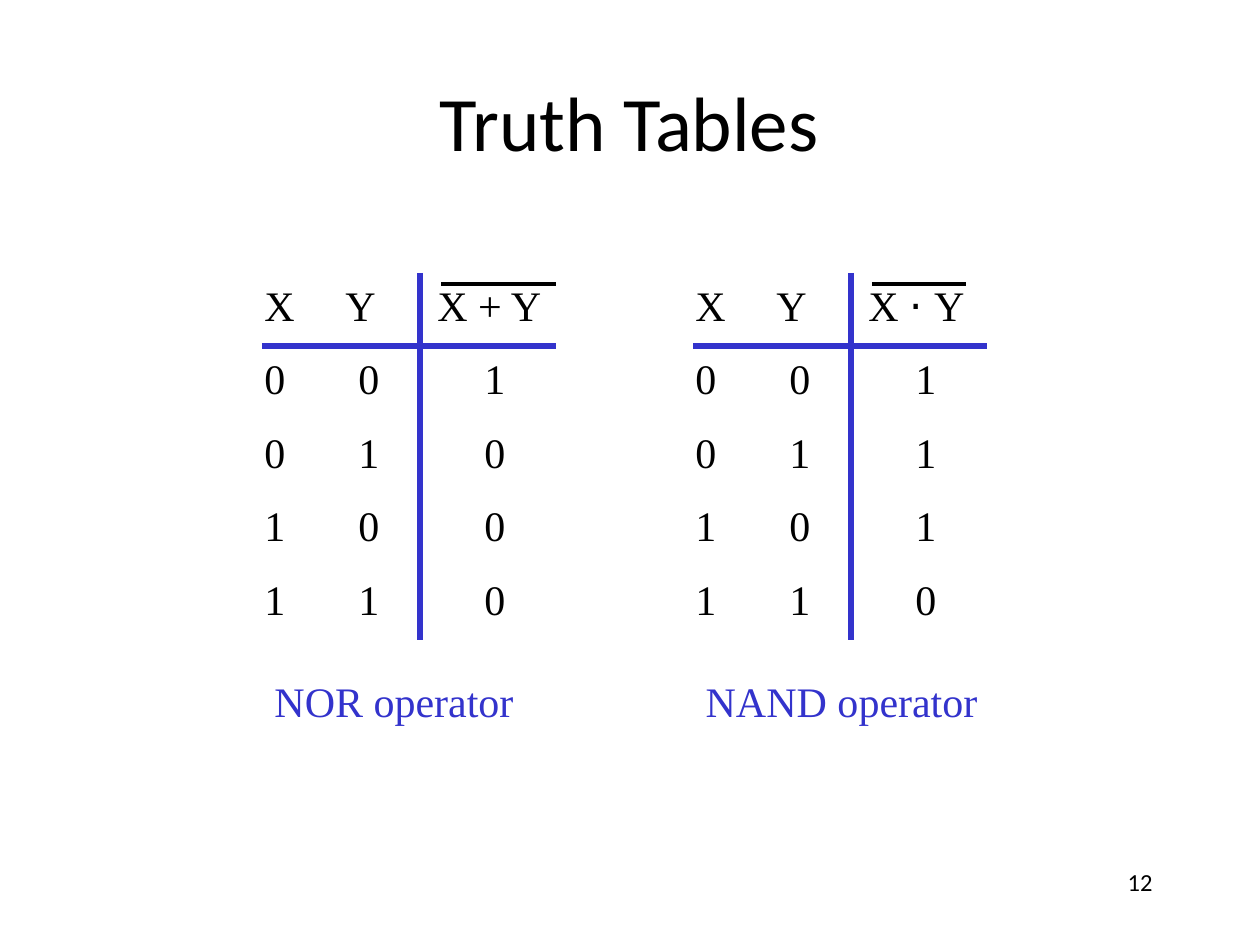
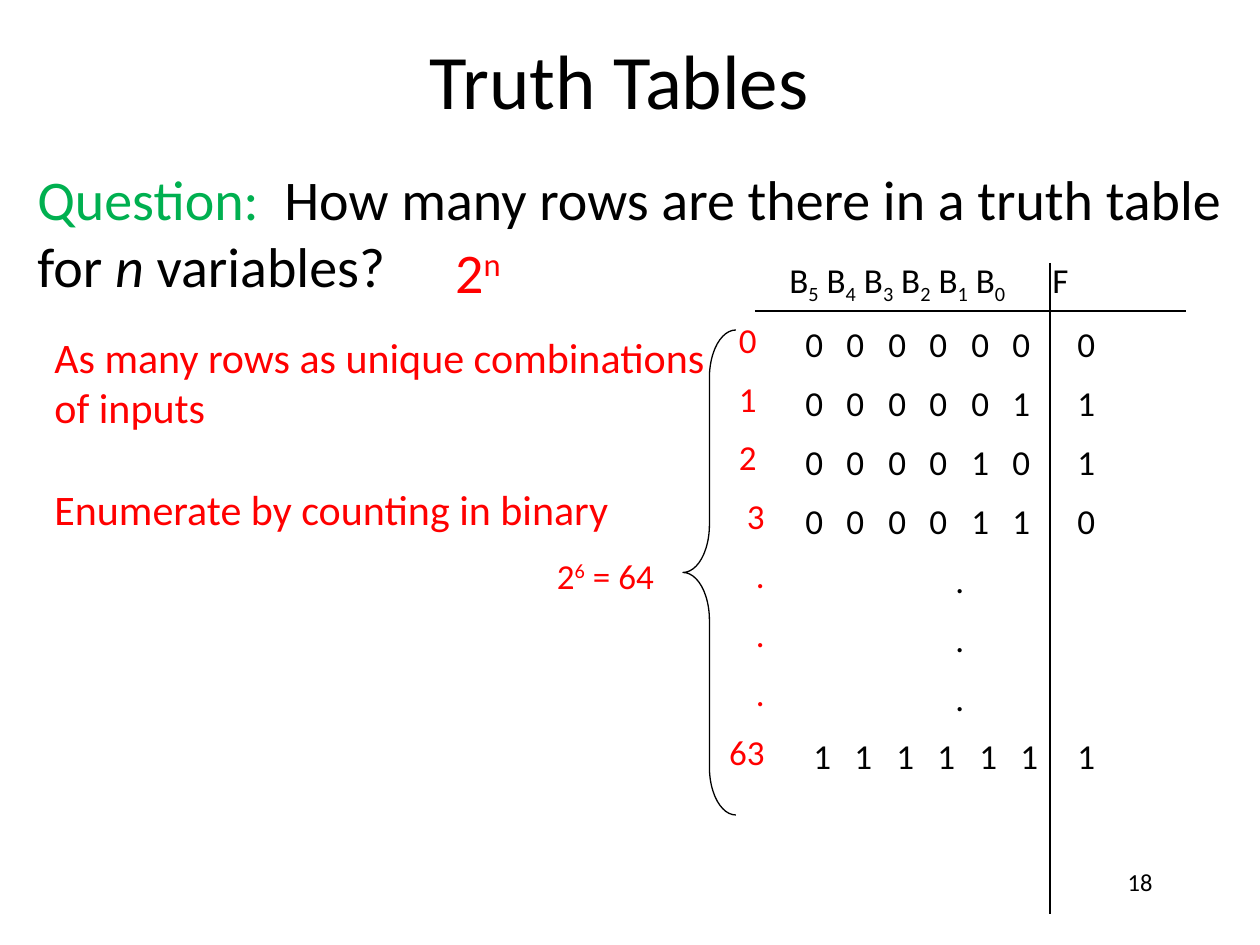
from dataclasses import dataclass

from lxml import etree
from pptx import Presentation
from pptx import util as u
from pptx.dml.color import RGBColor
from pptx.enum import shapes, text
from pptx.oxml.ns import qn
from pptx.slide import Slide

PX_PER_INCH = 126
LEFT, CENTER, RIGHT = text.PP_ALIGN.LEFT, text.PP_ALIGN.CENTER, text.PP_ALIGN.RIGHT


@dataclass(frozen=True)
class Theme:
    sans: str = "Calibri"
    serif: str = "Times New Roman"
    symbol: str = "Arial"
    black: str = "000000"
    blue: str = "3333CC"
    red: str = "FF0000"
    green: str = "00B050"
    title: int = 44
    question: int = 32
    body: int = 24
    table: int = 20
    footer: int = 14
    rule: float = 3
    overline: float = 2.25
    hairline: float = 0.75


T = Theme()


@dataclass(frozen=True)
class Style:
    size: int
    color: str = T.black
    font: str = T.sans


@dataclass(frozen=True)
class Run:
    text: str
    baseline: int = 0
    italic: bool = False
    color: str | None = None
    font: str | None = None


@dataclass(frozen=True)
class Para:
    runs: list[Run]
    tabs: tuple[int, ...] = ()
    before: float = 0


@dataclass(frozen=True)
class Box:
    x: int
    y: int
    w: int
    h: int


@dataclass(frozen=True)
class Gate:
    x: int
    caption: str
    caption_w: int
    overline_w: int
    output: list[Run]
    values: str


GATES = [
    Gate(252, "NOR operator", 264, 115, [Run("X + Y")], "1000"),
    Gate(683, "NAND operator", 297, 94,
         [Run("X "), Run("⋅ ", font=T.symbol), Run("Y")], "1110"),
]
INPUTS = ["00", "01", "10", "11"]
GATE_GAP = 13.2
GATE_HEAD_TABS = (81, 173)
GATE_ROW_TABS = (94, 220)

COUNT_GAP = 9.65
COUNT_ROWS = [("000000", "0"), ("000001", "1"), ("000010", "1"), ("000011", "0")]
LAST_ROW = ("111111", "1")
OUTPUT_TAB = 288
DOTS = ["."] * 3


def px(n: float) -> u.Emu:
    return u.Emu(round(n * 914400 / PX_PER_INCH))


def line_of(content: str, **kw) -> Para:
    return Para([Run(content)], **kw)


def add_text(s: Slide, box: Box, paras: list[Para], style: Style,
             align=LEFT, wrap: bool = True, middle: bool = False) -> None:
    sp = s.shapes.add_textbox(px(box.x), px(box.y), px(box.w), px(box.h))
    tf = sp.text_frame
    tf.word_wrap = wrap
    tf.vertical_anchor = text.MSO_ANCHOR.MIDDLE if middle else text.MSO_ANCHOR.TOP
    for i, para in enumerate(paras):
        p = tf.add_paragraph() if i else tf.paragraphs[0]
        p.alignment = align
        if i and para.before:
            p.space_before = u.Pt(para.before)
        if para.tabs:
            tabs = etree.SubElement(p._p.get_or_add_pPr(), qn("a:tabLst"))
            for pos in para.tabs:
                etree.SubElement(tabs, qn("a:tab"), pos=str(px(pos)), algn="l")
        for run in para.runs:
            r = p.add_run()
            r.text = run.text
            r.font.size = u.Pt(style.size)
            r.font.name = run.font or style.font
            r.font.color.rgb = RGBColor.from_string(run.color or style.color)
            if run.italic:
                r.font.italic = True
            if run.baseline:
                r._r.get_or_add_rPr().set("baseline", str(run.baseline * 1000))


def add_line(s: Slide, x1: int, y1: int, x2: int, y2: int,
             color: str, width: float) -> None:
    c = s.shapes.add_connector(shapes.MSO_CONNECTOR.STRAIGHT,
                               px(x1), px(y1), px(x2), px(y2))
    c.line.color.rgb = RGBColor.from_string(color)
    c.line.width = u.Pt(width)
    etree.SubElement(c._element.spPr, qn("a:effectLst"))


def add_base(prs, title: Box, number: int) -> Slide:
    s = prs.slides.add_slide(prs.slide_layouts[6])
    add_text(s, title, [line_of("Truth Tables")], Style(T.title), CENTER, middle=True)
    add_text(s, Box(903, 861, 262, 63), [line_of(str(number))], Style(T.footer), RIGHT)
    return s


def add_gate(s: Slide, g: Gate) -> None:
    paras = [Para([Run("X\tY\t"), *g.output], GATE_HEAD_TABS)]
    paras += [line_of("\t".join((*pair, out)), tabs=GATE_ROW_TABS, before=GATE_GAP)
              for pair, out in zip(INPUTS, g.values)]
    add_text(s, Box(g.x, 273, 315, 365), paras, Style(T.body, font=T.serif))
    add_line(s, g.x + 168, 273, g.x + 168, 640, T.blue, T.rule)
    add_line(s, g.x + 10, 346, g.x + 304, 346, T.blue, T.rule)
    add_line(s, g.x + 189, 284, g.x + 189 + g.overline_w, 284, T.black, T.overline)
    add_text(s, Box(g.x + 10, 669, g.caption_w, 63), [line_of(g.caption)],
             Style(T.body, T.blue, T.serif), CENTER, wrap=False)


def count_row(bits: str, out: str, start: int) -> Para:
    tabs = tuple(round(start + 41.4 * i) for i in range(len(bits))) + (OUTPUT_TAB,)
    return line_of("\t" + "\t".join((*bits, out)), tabs=tabs, before=COUNT_GAP)


def add_count_table(s: Slide) -> None:
    head = []
    for i in reversed(range(6)):
        head += [Run("B" if i == 5 else " B"), Run(str(i), baseline=-25)]
    paras = [Para(head + [Run("\tF")], (263,))]
    paras += [count_row(bits, out, 16) for bits, out in COUNT_ROWS]
    paras += [line_of("\t" + d, tabs=(166,), before=COUNT_GAP) for d in DOTS]
    paras.append(count_row(*LAST_ROW, 24))
    add_text(s, Box(777, 252, 441, 627), paras, Style(T.table))
    add_line(s, 755, 311, 1186, 311, T.black, T.hairline)
    add_line(s, 1050, 263, 1050, 914, T.black, T.hairline)


def add_row_count(s: Slide) -> None:
    sp = s.shapes.add_shape(shapes.MSO_SHAPE.LEFT_BRACE,
                            px(683), px(330), px(53), px(485))
    sp.adjustments[0] = 0.9
    sp.adjustments[1] = 0.5
    sp.shadow.inherit = False
    sp.fill.background()
    sp.line.color.rgb = RGBColor.from_string(T.black)
    sp.line.width = u.Pt(T.hairline)
    red = Style(T.table, T.red)
    labels = ["0 ", "1 ", "2 ", "3", *DOTS, "63"]
    add_text(s, Box(693, 312, 84, 567),
             [line_of(n, before=COUNT_GAP) for n in labels], red, RIGHT)
    add_text(s, Box(543, 548, 125, 55),
             [Para([Run("2"), Run("6", baseline=30), Run(" = 64")])],
             red, CENTER, wrap=False)


def add_question(s: Slide) -> None:
    add_text(s, Box(25, 158, 1222, 149), [
        Para([Run("Question:", color=T.green),
              Run("\tHow many rows are there in a truth table")], (247,)),
        Para([Run("for "), Run("n", italic=True), Run(" variables?")]),
    ], Style(T.question))
    add_text(s, Box(42, 325, 682, 217), [
        line_of("As many rows as unique combinations"),
        line_of("of inputs"),
        line_of("Enumerate by counting in binary", before=29.3),
    ], Style(T.body, T.red))
    add_text(s, Box(441, 231, 74, 131), [Para([Run("2"), Run("n", baseline=30)])],
             Style(T.question, T.red), CENTER, wrap=False)


def main() -> None:
    prs = Presentation()
    prs.slide_width, prs.slide_height = px(1260), px(945)
    s = add_base(prs, Box(94, 42, 1071, 158), 12)
    for gate in GATES:
        add_gate(s, gate)
    s = add_base(prs, Box(84, 0, 1071, 158), 18)
    add_count_table(s)
    add_row_count(s)
    add_question(s)
    prs.save("out.pptx")


if __name__ == "__main__":
    main()
